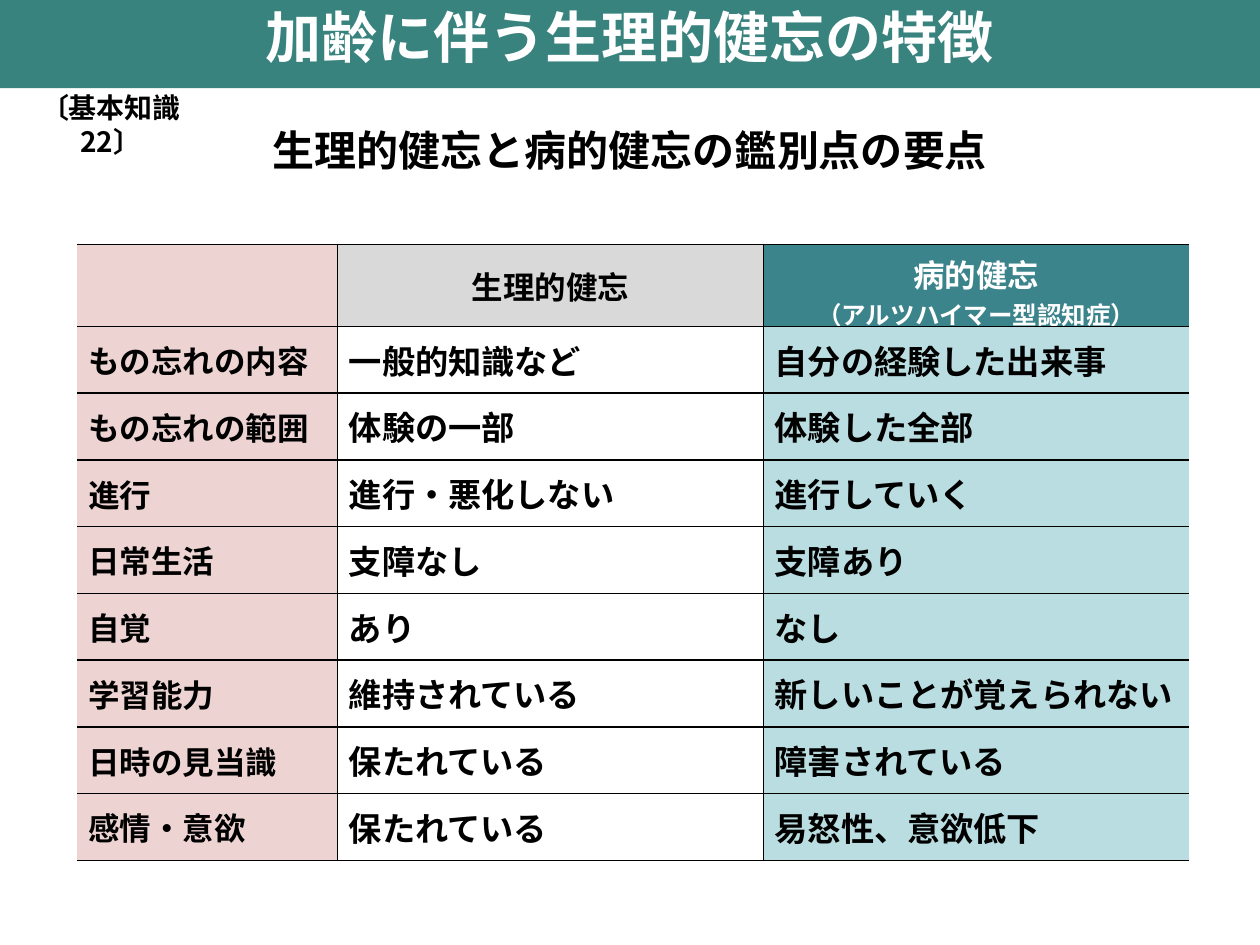
from typing import NamedTuple

from lxml.etree import SubElement
from pptx import Presentation
from pptx.dml.color import RGBColor
from pptx.enum.shapes import MSO_SHAPE
from pptx.enum.text import MSO_ANCHOR, PP_ALIGN
from pptx.oxml.ns import qn
from pptx.util import Inches, Pt

FONT = "Noto Sans CJK JP"
BLACK, WHITE = "000000", "FFFFFF"
LEFT, CENTER = PP_ALIGN.LEFT, PP_ALIGN.CENTER


class Column(NamedTuple):
    width: float
    header_fill: str
    header_color: str
    body_fill: str | None
    body_size: float
    borders: str


COLUMNS = [
    Column(2.07, "EDD4D3", BLACK, "EDD4D3", 18, "RTB"),
    Column(3.38, "D9D9D9", BLACK, None, 19, "LRTB"),
    Column(3.38, "3C848C", WHITE, "BADDE1", 19, "LTB"),
]
HEADERS = [
    [],
    [("生理的健忘", 18)],
    [("病的健忘", 18), ("（アルツハイマー型認知症）", 14)],
]
ROWS = [
    ("もの忘れの内容", "一般的知識など", "自分の経験した出来事"),
    ("もの忘れの範囲", "体験の一部", "体験した全部"),
    ("進行", "進行・悪化しない", "進行していく"),
    ("日常生活", "支障なし", "支障あり"),
    ("自覚", "あり", "なし"),
    ("学習能力", "維持されている", "新しいことが覚えられない"),
    ("日時の見当識", "保たれている", "障害されている"),
    ("感情・意欲", "保たれている", "易怒性、意欲低下"),
]
HEADER_HEIGHT, ROW_HEIGHT = 0.65, 0.53


def rgb(color: str) -> RGBColor:
    return RGBColor.from_string(color)


def write(frame, lines: list[tuple[str, float]], color: str, align) -> None:
    """Put each (text, size) pair in its own paragraph."""
    for index, (text, size) in enumerate(lines):
        paragraph = frame.add_paragraph() if index else frame.paragraphs[0]
        paragraph.alignment = align
        run = paragraph.add_run()
        run.text = text
        run.font.name = FONT
        run.font.size = Pt(size)
        run.font.bold = True
        run.font.color.rgb = rgb(color)
        SubElement(run.font._element, qn("a:ea"), typeface=FONT)


def place(shape, left: float, top: float, width: float, height: float) -> None:
    shape.left, shape.top = Inches(left), Inches(top)
    shape.width, shape.height = Inches(width), Inches(height)


def write_heading(shape, top: float, text: str, size: float, color: str) -> None:
    place(shape, 0.22, top, 9.56, 0.57)
    frame = shape.text_frame
    frame.word_wrap = False
    frame.vertical_anchor = MSO_ANCHOR.MIDDLE
    write(frame, [(text, size)], color, CENTER)


def style_cell(cell, fill: str | None, borders: str) -> None:
    cell.vertical_anchor = MSO_ANCHOR.MIDDLE
    cell.margin_left = cell.margin_right = Inches(0.09)
    cell.margin_top = cell.margin_bottom = Inches(0.05)
    properties = cell._tc.get_or_add_tcPr()
    for side in "LRTB":
        visible = side in borders
        line = SubElement(properties, qn(f"a:ln{side}"), w=str(Pt(1) if visible else 0))
        if visible:
            solid = SubElement(line, qn("a:solidFill"))
            SubElement(solid, qn("a:srgbClr"), val=BLACK)
        else:
            SubElement(line, qn("a:noFill"))
    if fill:
        cell.fill.solid()
        cell.fill.fore_color.rgb = rgb(fill)
    else:
        cell.fill.background()


def add_comparison_table(slide) -> None:
    height = HEADER_HEIGHT + ROW_HEIGHT * len(ROWS)
    width = sum(column.width for column in COLUMNS)
    table = slide.shapes.add_table(
        len(ROWS) + 1, len(COLUMNS),
        Inches(0.61), Inches(1.94), Inches(width), Inches(height),
    ).table
    for index, row in enumerate(table.rows):
        row.height = Inches(ROW_HEIGHT if index else HEADER_HEIGHT)
    for index, column in enumerate(COLUMNS):
        table.columns[index].width = Inches(column.width)
        header = table.cell(0, index)
        style_cell(header, column.header_fill, column.borders)
        write(header.text_frame, HEADERS[index], column.header_color, CENTER)
        for number, texts in enumerate(ROWS, start=1):
            cell = table.cell(number, index)
            style_cell(cell, column.body_fill, column.borders)
            write(cell.text_frame, [(texts[index], column.body_size)], BLACK, LEFT)


def main() -> None:
    presentation = Presentation()
    presentation.slide_width, presentation.slide_height = Inches(10), Inches(7.5)
    slide = presentation.slides.add_slide(presentation.slide_layouts[5])

    band = slide.shapes.add_shape(
        MSO_SHAPE.RECTANGLE, Inches(0), Inches(-0.08), Inches(10), Inches(0.78)
    )
    band.shadow.inherit = False
    band.fill.solid()
    band.fill.fore_color.rgb = rgb("39837F")
    band.line.fill.background()

    title = slide.shapes.title
    title.element.addprevious(band.element)  # the band lies behind the title
    write_heading(title, 0, "加齢に伴う生理的健忘の特徴", 32, WHITE)

    subtitle = slide.shapes.add_textbox(0, 0, 0, 0)
    write_heading(subtitle, 0.9, "生理的健忘と病的健忘の鑑別点の要点", 24, BLACK)

    reference = slide.shapes.add_textbox(0, 0, 0, 0)
    place(reference, 0, 0.67, 1.76, 0.37)
    reference.text_frame.word_wrap = True
    write(reference.text_frame, [("〔基本知識22〕", 16)], BLACK, CENTER)

    add_comparison_table(slide)
    presentation.save("out.pptx")


if __name__ == "__main__":
    main()
